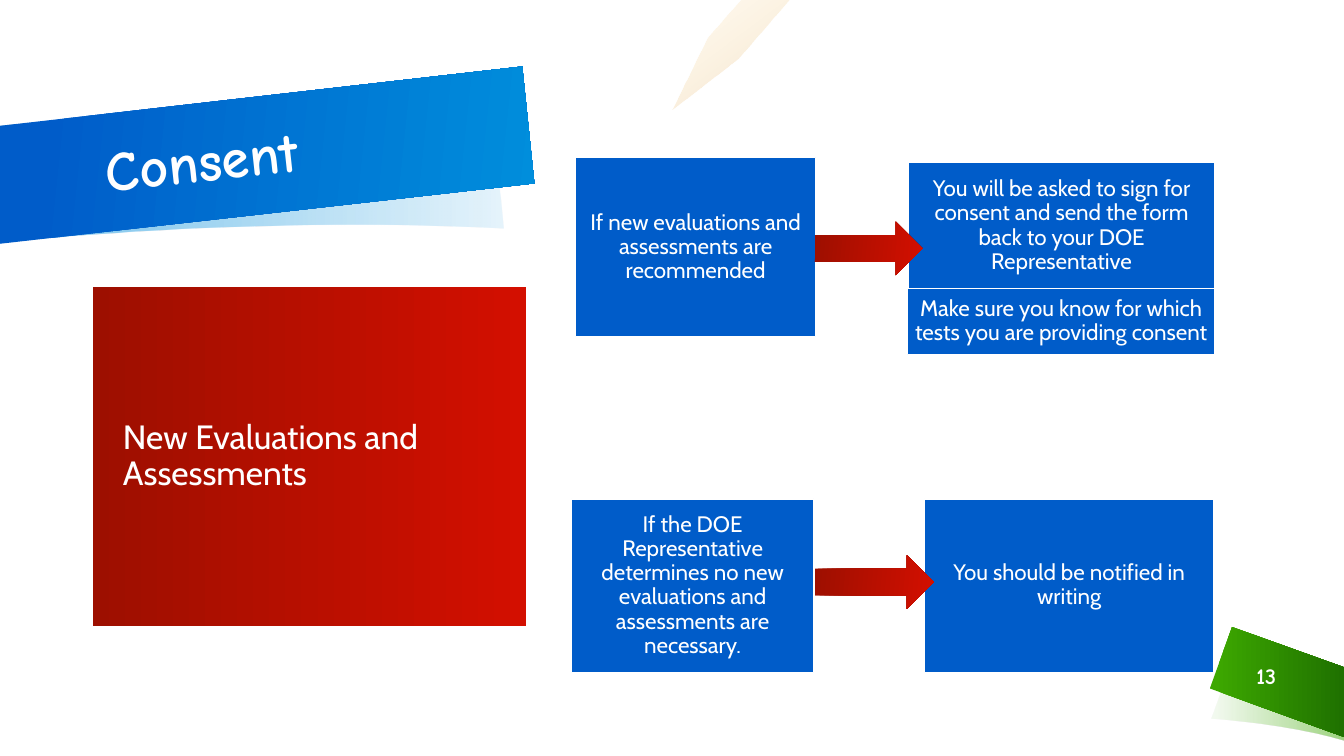
from lxml import etree
from pptx import Presentation
from pptx.dml.color import RGBColor
from pptx.enum.shapes import MSO_SHAPE
from pptx.enum.text import MSO_ANCHOR, PP_ALIGN
from pptx.oxml.ns import qn
from pptx.util import Inches, Pt

RECT, ARROW = MSO_SHAPE.RECTANGLE, MSO_SHAPE.RIGHT_ARROW
MIDDLE = MSO_ANCHOR.MIDDLE
LEFT, CENTER = PP_ALIGN.LEFT, PP_ALIGN.CENTER

COLORS = {"white": "FFFFFF", "blue": "005CC9", "sky": "008EDC", "red": "D30F00",
          "dark_red": "9D0F00", "green": "3DA800", "dark_green": "1F7100",
          "orange": "FFAA00", "brown": "C07400"}
BODY_FONT, TITLE_FONT = "Cabin", "Comic Neue"

# Two numbers make a line point, six make a Bézier curve.
DECORATIONS = [
    ([(12.02, 7.13), (12.02, 7.13, 12.78, 7.18, 13.33, 7.35), (13.33, 6.68),
      (12.72, 6.51, 12.24, 6.52, 12.24, 6.52)],
     [(3, "green", 6), (100, "green", 50)], 0),
    ([(13.33, 6.62), (12.22, 6.22), (12, 6.83), (13.33, 7.31)],
     [(3, "green", 100), (100, "dark_green", 100)], 0),
    ([(4.99, 2.27), (4.87, 1.13), (4.87, 1.13, 3.13, 0.94, -0.02, 1.25),
      (-0.02, 2.41), (2.86, 2.12, 4.99, 2.27, 4.99, 2.27)],
     [(0, "sky", 10), (88, "sky", 50)], 180),
    ([(-0.01, 2.42), (5.3, 1.82), (5.18, 0.66), (-0.01, 1.25)],
     [(9, "blue", 100), (100, "sky", 100)], 6),
    ([(7.35, 0), (7.02, 0.38), (6.67, 1.09), (7.32, 0.59), (7.83, 0)],
     [(0, "orange", 5), (100, "brown", 20)], 53),
]
PAGE_NUMBER = ("13", (12.21, 6.5, 0.7, 0.4))
TOPIC = ("New Evaluations and Assessments", (0.92, 2.85, 4.3, 3.36))
TITLE = ("Consent", (0.94, 0.79, 4.19, 1.45))
STEPS = [
    ("If new evaluations and assessments are recommended", (5.71, 1.56, 2.38, 1.78)),
    ("You will be asked to sign for consent and send the form back to your "
     "DOE Representative", (9.01, 1.61, 3.04, 1.26)),
    ("If the DOE Representative determines no new evaluations and assessments "
     "are necessary.", (5.67, 4.95, 2.4, 1.72)),
    ("Make sure you know for which tests you are providing consent",
     (9, 2.86, 3.05, 0.66)),
    ("You should be notified in writing", (9.17, 4.95, 2.87, 1.72)),
]
ARROWS = [(8.08, 2.2, 1.07, 0.53), (8.08, 5.51, 1.18, 0.53)]
RED_STOPS = [(0, "dark_red", 100), (100, "red", 100)]


def rgb(name):
    return RGBColor.from_string(COLORS[name])


def fill_gradient(sp, stops, angle):
    sp.fill.gradient()
    grad = sp.fill._xPr.find(qn("a:gradFill"))
    for child in list(grad):
        grad.remove(child)
    gs_list = etree.SubElement(grad, qn("a:gsLst"))
    for pos, name, opacity in stops:
        gs = etree.SubElement(gs_list, qn("a:gs"), pos=str(pos * 1000))
        clr = etree.SubElement(gs, qn("a:srgbClr"), val=COLORS[name])
        if opacity < 100:
            etree.SubElement(clr, qn("a:alpha"), val=str(opacity * 1000))
    etree.SubElement(grad, qn("a:lin"), ang=str(angle * 60000), scaled="0")
    sp.line.fill.background()
    sp.shadow.inherit = False


def trace(outline, steps=24):
    points = [outline[0]]
    for seg in outline[1:]:
        if len(seg) == 2:
            points.append(seg)
            continue
        ctrl = [points[-1], seg[:2], seg[2:4], seg[4:]]
        for i in range(1, steps + 1):
            t = i / steps
            weights = ((1 - t) ** 3, 3 * t * (1 - t) ** 2, 3 * t * t * (1 - t), t ** 3)
            points.append(tuple(sum(w * c[k] for w, c in zip(weights, ctrl))
                                for k in (0, 1)))
    return [(Inches(x), Inches(y)) for x, y in points]


def add_outline(slide, outline, stops, angle):
    start, *rest = trace(outline)
    builder = slide.shapes.build_freeform(*start)
    builder.add_line_segments(rest, close=True)
    fill_gradient(builder.convert_to_shape(), stops, angle)


def add_shape(slide, kind, box):
    sp = slide.shapes.add_shape(kind, *map(Inches, box))
    sp.shadow.inherit = False
    return sp


def set_text(sp, text, size=16, font=BODY_FONT, bold=False, align=CENTER,
             spacing=0.9, insets=(0.1, 0.05, 0.1, 0.05)):
    tf = sp.text_frame
    tf.word_wrap = True
    tf.vertical_anchor = MIDDLE
    tf.margin_left, tf.margin_top, tf.margin_right, tf.margin_bottom = map(Inches, insets)
    p = tf.paragraphs[0]
    p.alignment, p.line_spacing = align, spacing
    r = p.add_run()
    r.text = text
    r.font.size, r.font.name, r.font.bold = Pt(size), font, bold
    r.font.color.rgb = rgb("white")


def main():
    """Build the consent slide and save it."""
    prs = Presentation()
    prs.slide_width, prs.slide_height = Inches(13.33), Inches(7.5)
    s = prs.slides.add_slide(prs.slide_layouts[6])

    for outline, stops, angle in DECORATIONS:
        add_outline(s, outline, stops, angle)

    text, box = PAGE_NUMBER
    set_text(s.shapes.add_textbox(*map(Inches, box)), text, font=TITLE_FONT,
             bold=True, spacing=1.0)

    text, box = TOPIC
    sp = add_shape(s, RECT, box)
    fill_gradient(sp, RED_STOPS, 0)
    set_text(sp, text, size=24, align=LEFT, insets=(0.3, 0.05, 0.1, 0.05))

    text, box = TITLE
    sp = s.shapes.add_textbox(*map(Inches, box))
    sp.rotation = 353.8
    set_text(sp, text, size=40, font=TITLE_FONT, bold=True, align=LEFT)

    for text, box in STEPS:
        sp = add_shape(s, RECT, box)
        sp.fill.solid()
        sp.fill.fore_color.rgb = rgb("blue")
        sp.line.color.rgb = rgb("white")
        sp.line.width = Pt(1)
        set_text(sp, text, insets=(0.07,) * 4)

    for box in ARROWS:
        fill_gradient(add_shape(s, ARROW, box), RED_STOPS, 6)

    prs.save("out.pptx")


if __name__ == "__main__":
    main()
